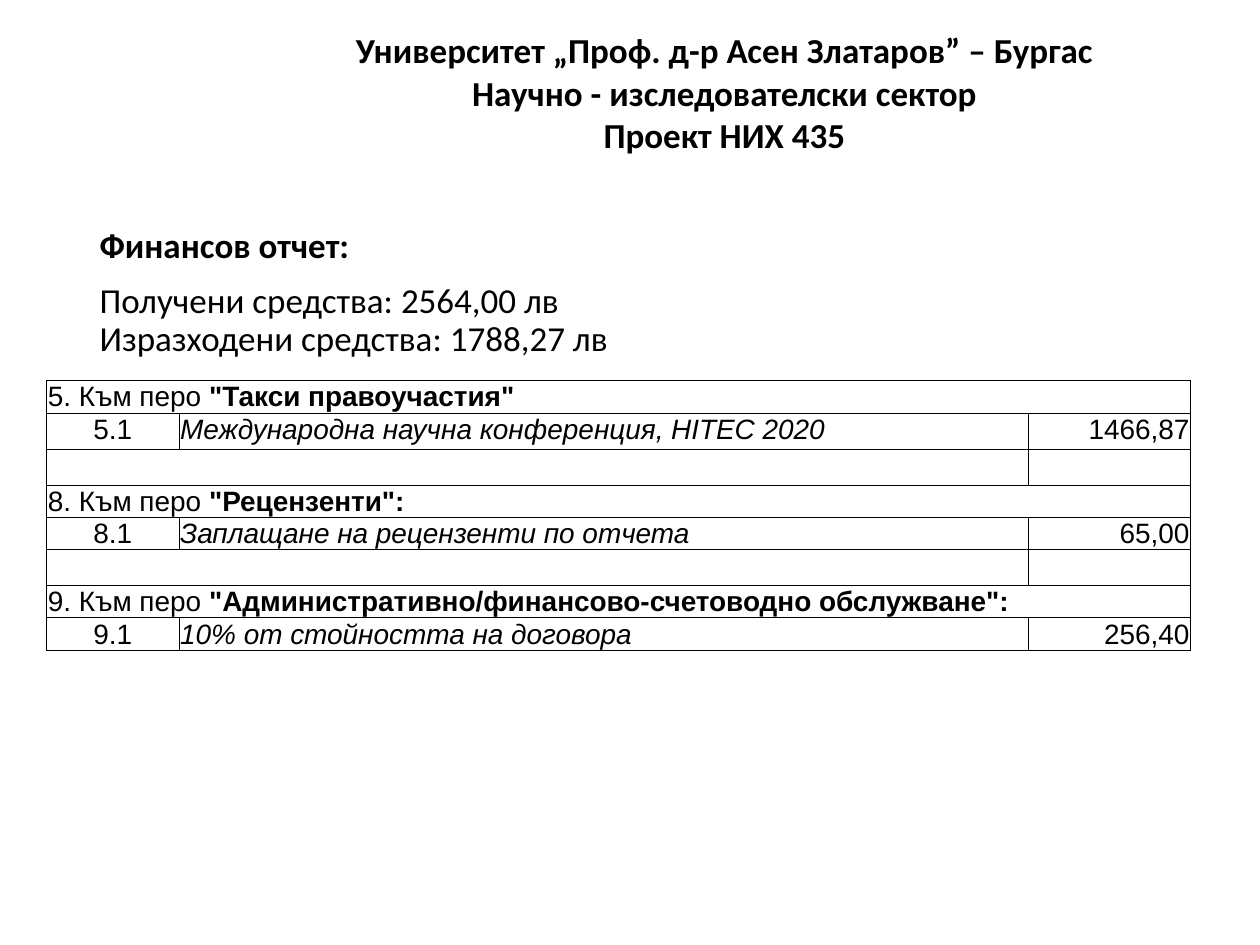
from lxml.etree import SubElement
from pptx import Presentation
from pptx.dml.color import RGBColor
from pptx.enum.text import MSO_ANCHOR, MSO_AUTO_SIZE, PP_ALIGN as Align
from pptx.oxml.ns import qn
from pptx.util import Inches, Pt

COLORS = {"text": "000000", "border": "000000"}
HEADING = [
    "Университет „Проф. д-р Асен Златаров” – Бургас",
    "Научно - изследователски сектор",
    "Проект НИХ 435",
]
FUNDS = ["Получени средства: 2564,00 лв", "Изразходени средства: 1788,27 лв"]
# Each section: number, name, item text, amount
SECTIONS = [
    ("5", '"Такси правоучастия"', "Международна научна конференция, HITEC 2020", "1466,87"),
    ("8", '"Рецензенти":', "Заплащане на рецензенти по отчета", "65,00"),
    ("9", '"Административно/финансово-счетоводно обслужване":',
     "10% от стойността на договора", "256,40"),
]
COLUMN_WIDTHS = [1.05, 6.74, 1.29]
ROW_HEIGHT = 0.25
FIRST_ITEM_HEIGHT = 0.29


class ReportPage:
    body_font, body_size = "Calibri", 20
    table_font, table_size = "Arial", 16

    def __init__(self, deck):
        self.page = deck.slides.add_slide(deck.slide_layouts[1])

    def span(self, para, text, font, size, bold=False, italic=False):
        run = para.add_run()
        run.text = text
        run.font.name, run.font.size = font, Pt(size)
        run.font.bold, run.font.italic = bold, italic
        run.font.color.rgb = RGBColor.from_string(COLORS["text"])

    def place(self, box, left, top, width, height):
        box.left, box.top = Inches(left), Inches(top)
        box.width, box.height = Inches(width), Inches(height)
        frame = box.text_frame
        frame.word_wrap = True
        frame.auto_size = MSO_AUTO_SIZE.NONE
        frame.vertical_anchor = MSO_ANCHOR.TOP
        return frame

    def heading(self, lines):
        frame = self.place(self.page.shapes.title, 1.81, 0.18, 7.88, 1.11)
        for index, line in enumerate(lines):
            para = frame.add_paragraph() if index else frame.paragraphs[0]
            para.alignment = Align.CENTER
            self.span(para, line, self.body_font, self.body_size, bold=True)

    def body_para(self, para, lines, space_before=0, bold=False):
        props = para._p.get_or_add_pPr()
        props.set("marL", "0")
        props.set("indent", "0")
        SubElement(props, qn("a:buNone"))
        para.line_spacing = 0.9
        para.space_before = Pt(space_before)
        for index, line in enumerate(lines):
            if index:
                para.add_line_break()
            self.span(para, line, self.body_font, self.body_size, bold)

    def body(self, title, lines):
        frame = self.place(self.page.placeholders[1], 0.69, 1.76, 8.62, 5.29)
        self.body_para(frame.paragraphs[0], [title], bold=True)
        self.body_para(frame.add_paragraph(), lines, space_before=10)

    def clear_cell(self, cell):
        """Strip the table style from a cell and give it thin borders."""
        cell.margin_left = cell.margin_right = cell.margin_top = Inches(0.01)
        cell.margin_bottom = 0
        props = cell._tc.get_or_add_tcPr()
        for side in ("a:lnL", "a:lnR", "a:lnT", "a:lnB"):
            line = SubElement(props, qn(side), w=str(Pt(0.5)))
            fill = SubElement(line, qn("a:solidFill"))
            SubElement(fill, qn("a:srgbClr"), val=COLORS["border"])
        cell.fill.background()

    def cell_text(self, cell, text, align=Align.LEFT, **style):
        para = cell.text_frame.paragraphs[0]
        para.alignment = align
        self.span(para, text, self.table_font, self.table_size, **style)

    def blank_row(self, table, row):
        table.cell(row, 0).merge(table.cell(row, 1))
        for column in range(3):
            para = table.cell(row, column).text_frame.paragraphs[0]
            SubElement(para._p, qn("a:endParaRPr"), sz=str(self.table_size * 100))

    def cost_table(self, sections):
        row_count = 3 * len(sections) - 1
        table = self.page.shapes.add_table(
            row_count, 3, Inches(0.37), Inches(3.02),
            Inches(sum(COLUMN_WIDTHS)), Inches(ROW_HEIGHT * row_count)).table
        table.first_row = table.horz_banding = False
        for column, width in zip(table.columns, COLUMN_WIDTHS):
            column.width = Inches(width)
        for row in table.rows:
            row.height = Inches(ROW_HEIGHT)
            for cell in row.cells:
                self.clear_cell(cell)
        table.rows[1].height = Inches(FIRST_ITEM_HEIGHT)

        for index, (number, name, item, amount) in enumerate(sections):
            top = 3 * index
            if index:
                self.blank_row(table, top - 1)
            table.cell(top, 0).merge(table.cell(top, 2))
            self.cell_text(table.cell(top, 0), f"{number}. Към перо ")
            self.cell_text(table.cell(top, 0), name, bold=True)
            self.cell_text(table.cell(top + 1, 0), f"{number}.1", Align.CENTER)
            self.cell_text(table.cell(top + 1, 1), item, italic=True)
            self.cell_text(table.cell(top + 1, 2), amount, Align.RIGHT)


def main():
    deck = Presentation()
    deck.slide_width, deck.slide_height = Inches(10), Inches(7.5)
    report = ReportPage(deck)
    report.heading(HEADING)
    report.body("Финансов отчет:", FUNDS)
    report.cost_table(SECTIONS)
    deck.save("out.pptx")


if __name__ == "__main__":
    main()
